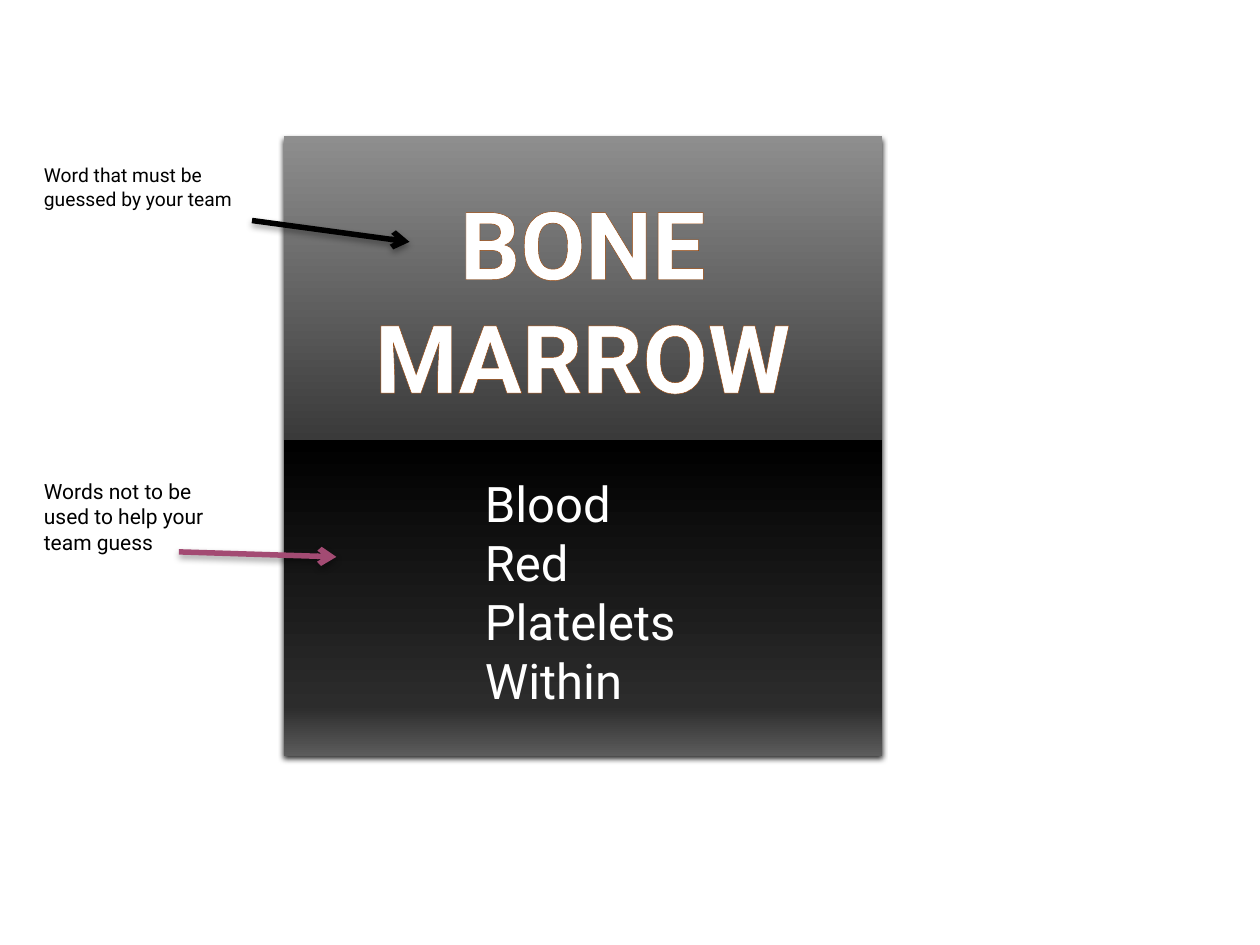
from dataclasses import dataclass

from lxml import etree
from pptx import Presentation, util as u
from pptx.dml.color import RGBColor
from pptx.enum import shapes, text
from pptx.oxml import parse_xml
from pptx.oxml.ns import nsdecls, qn


@dataclass(frozen=True)
class Theme:
    font: str = "Roboto"
    white: str = "FFFFFF"
    black: str = "000000"
    plum: str = "A34B73"
    outline: str = "984204"
    card_stops: tuple = ((0, "8E8E8E"), (49, "3A3A3A"), (49, "000000"),
                         (92, "2C2C2C"), (100, "5C5C5C"))
    title_size: float = 54
    word_size: float = 28
    guess_note_size: float = 11
    taboo_note_size: float = 12
    arrow_width: float = 3.15
    outline_width: float = 0.83


THEME = Theme()


@dataclass(frozen=True)
class Label:
    box: tuple
    lines: tuple
    size: float
    color: str


@dataclass(frozen=True)
class Arrow:
    start: tuple
    end: tuple
    color: str


CARD_BOX = (2.25, 1.08, 4.75, 4.92)
TITLE = Label((2.25, 1.42, 4.75, 1.96), ("BONE MARROW",), THEME.title_size, THEME.white)
LABELS = (
    Label((3.75, 3.71, 1.83, 2.46), ("Blood", "Red", "Platelets", "Within"),
          THEME.word_size, THEME.white),
    Label((0.25, 1.25, 1.75, 0.47), ("Word that must be guessed by your team",),
          THEME.guess_note_size, THEME.black),
    Label((0.25, 3.75, 1.75, 0.71), ("Words not to be used to help your team guess",),
          THEME.taboo_note_size, THEME.black),
)
ARROWS = (
    Arrow((2, 1.75), (3.25, 1.92), THEME.black),
    Arrow((1.42, 4.38), (2.67, 4.42), THEME.plum),
)


def inches(values: tuple) -> list:
    return [u.Inches(value) for value in values]


def set_attributes(target, values: dict) -> None:
    for name, value in values.items():
        setattr(target, name, value)


def add_shadow(shape, alpha: int, blur: float, distance: float) -> None:
    """Append a downward shadow; call after the fill and line are set."""
    shape.element.spPr.append(parse_xml(
        f'<a:effectLst {nsdecls("a")}><a:outerShdw blurRad="{u.Pt(blur)}" '
        f'dist="{u.Pt(distance)}" dir="5400000" algn="ctr" rotWithShape="0">'
        f'<a:srgbClr val="{THEME.black}"><a:alpha val="{alpha * 1000}"/></a:srgbClr>'
        '</a:outerShdw></a:effectLst>'))


def add_card(slide):
    card = slide.shapes.add_shape(shapes.MSO_SHAPE.RECTANGLE, *inches(CARD_BOX))
    card.line.fill.background()
    stops = "".join(f'<a:gs pos="{position * 1000}"><a:srgbClr val="{color}"/></a:gs>'
                    for position, color in THEME.card_stops)
    card.element.spPr.find(qn("a:prstGeom")).addnext(parse_xml(
        f'<a:gradFill {nsdecls("a")} rotWithShape="1"><a:gsLst>{stops}</a:gsLst>'
        '<a:lin ang="5400000" scaled="0"/></a:gradFill>'))
    add_shadow(card, alpha=83, blur=3.1, distance=2)
    return card


def write_label(shape, label: Label, alignment=text.PP_ALIGN.LEFT, bold=False) -> None:
    set_attributes(shape, dict(zip(("left", "top", "width", "height"), inches(label.box))))
    frame = shape.text_frame
    set_attributes(frame, {"word_wrap": True,
                           "auto_size": text.MSO_AUTO_SIZE.SHAPE_TO_FIT_TEXT,
                           "vertical_anchor": text.MSO_ANCHOR.TOP})
    frame.text = "\n".join(label.lines)
    for paragraph in frame.paragraphs:
        paragraph.alignment = alignment
        font = paragraph.runs[0].font
        set_attributes(font, {"name": THEME.font, "size": u.Pt(label.size), "bold": bold})
        font.color.rgb = RGBColor.from_string(label.color)


def outline_text(run) -> None:
    run.font.element.insert(0, parse_xml(
        f'<a:ln {nsdecls("a")} w="{u.Pt(THEME.outline_width)}"><a:solidFill>'
        f'<a:srgbClr val="{THEME.outline}"/></a:solidFill></a:ln>'
    )) if hasattr(run.font, "element") else run._r.get_or_add_rPr().insert(0, parse_xml(
        f'<a:ln {nsdecls("a")} w="{u.Pt(THEME.outline_width)}"><a:solidFill>'
        f'<a:srgbClr val="{THEME.outline}"/></a:solidFill></a:ln>'))


def add_arrow(slide, arrow: Arrow) -> None:
    connector = slide.shapes.add_connector(
        shapes.MSO_CONNECTOR.STRAIGHT, *inches(arrow.start + arrow.end))
    connector.line.width = u.Pt(THEME.arrow_width)
    connector.line.color.rgb = RGBColor.from_string(arrow.color)
    etree.SubElement(connector.element.spPr.find(qn("a:ln")), qn("a:tailEnd"), type="arrow")
    add_shadow(connector, alpha=38, blur=4, distance=2)


def main() -> None:
    presentation = Presentation()
    set_attributes(presentation, {"slide_width": u.Inches(10), "slide_height": u.Inches(7.5)})
    slide = presentation.slides.add_slide(presentation.slide_layouts[5])

    title = slide.shapes.title
    write_label(title, TITLE, text.PP_ALIGN.CENTER, bold=True)
    outline_text(title.text_frame.paragraphs[0].runs[0])
    title.element.addprevious(add_card(slide).element)  # the card lies behind the title

    for label in LABELS:
        write_label(slide.shapes.add_textbox(*inches(label.box)), label)
    for arrow in ARROWS:
        add_arrow(slide, arrow)
    presentation.save("out.pptx")


if __name__ == "__main__":
    main()
